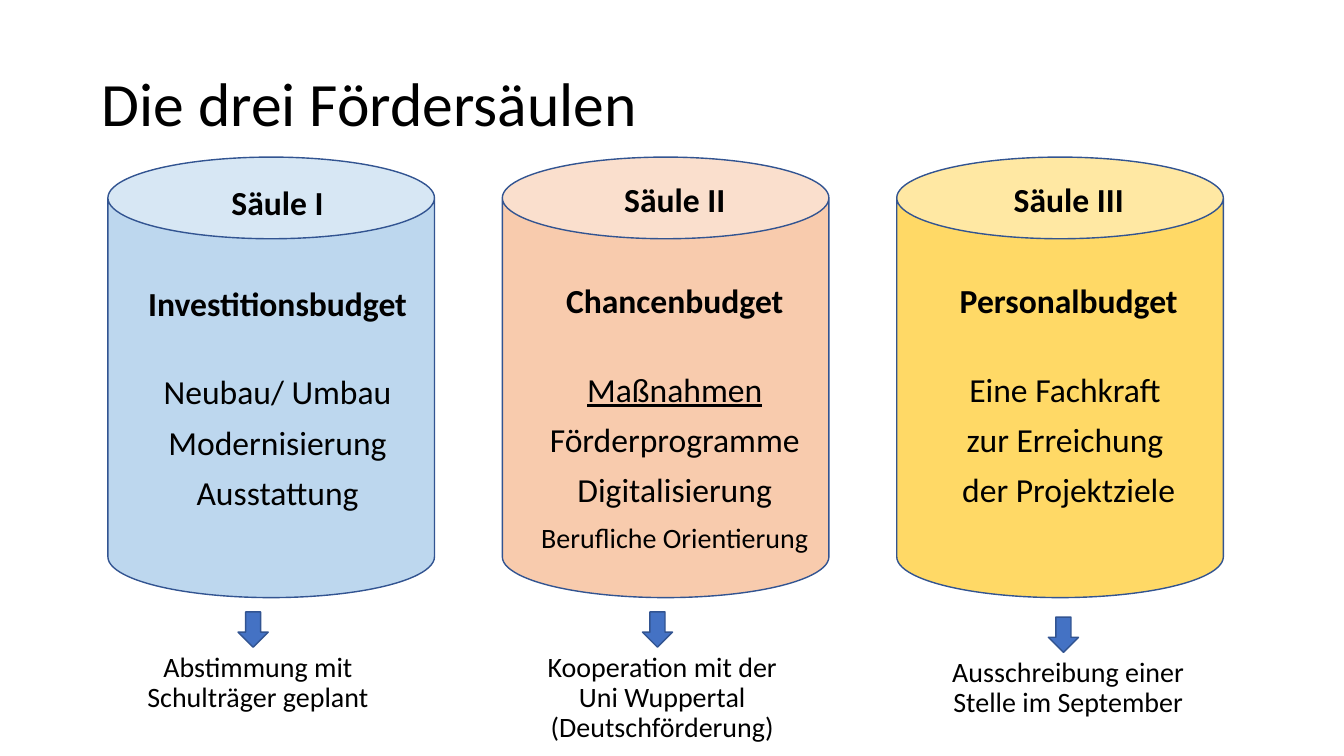
from lxml import etree
from pptx import Presentation
from pptx import util as u
from pptx.dml.color import RGBColor
from pptx.enum import shapes, text
from pptx.oxml.ns import qn

BLACK = RGBColor(0x00, 0x00, 0x00)
OUTLINE = RGBColor(0x32, 0x54, 0x91)
ARROW_BLUE = RGBColor(0x44, 0x72, 0xC4)
PILLAR_BLUE = RGBColor(0xBD, 0xD7, 0xEE)
PILLAR_ORANGE = RGBColor(0xF8, 0xCB, 0xAD)
PILLAR_YELLOW = RGBColor(0xFF, 0xD9, 0x66)

# One entry per pillar: fill, text position, lines, note position, note (cm)
PILLARS = [
    (PILLAR_BLUE, (2.08, 4.57),
     ["Säule I", "Investitionsbudget", "Neubau/ Umbau", "Modernisierung", "Ausstattung"],
     (2.92, 16.33), "Abstimmung mit Schulträger geplant"),
    (PILLAR_ORANGE, (12.09, 4.5),
     ["Säule II", "Chancenbudget", "Maßnahmen", "Förderprogramme", "Digitalisierung",
      "Berufliche Orientierung"],
     (13.11, 16.33), "Kooperation mit der Uni Wuppertal (Deutschförderung)"),
    (PILLAR_YELLOW, (22.02, 4.5),
     ["Säule III", "Personalbudget", "Eine Fachkraft ", "zur Erreichung ", "der Projektziele"],
     (23.34, 16.46), "Ausschreibung einer Stelle im September"),
]
GAP_BEFORE = {1: 46, 2: 37.5}  # wider space above the budget name and the list


def add_preset(kind, left, top, width, height, fill):
    shape = page.shapes.add_shape(kind, u.Cm(left), u.Cm(top), u.Cm(width), u.Cm(height))
    shape.shadow.inherit = False
    shape.fill.solid()
    shape.fill.fore_color.rgb = fill
    shape.line.color.rgb = OUTLINE
    shape.line.width = u.Pt(1)
    return shape


def write_lines(box, lines, size, align=text.PP_ALIGN.CENTER):
    frame = box.text_frame
    frame.word_wrap = True
    frame.auto_size = text.MSO_AUTO_SIZE.NONE
    frame.text = "\n".join(lines)
    for para in frame.paragraphs:
        para.alignment = align
        para.line_spacing = 0.9
        para.space_before = u.Pt(10)
        para.font.name = "Calibri"
        para.font.size = u.Pt(size)
        para.font.color.rgb = BLACK
    return frame.paragraphs


deck = Presentation()
deck.slide_width, deck.slide_height = u.Cm(33.87), u.Cm(19.05)
page = deck.slides.add_slide(deck.slide_layouts[1])

# Title
title = page.shapes.title
title.left, title.top, title.width, title.height = map(u.Cm, (2.31, 0.84, 29.21, 3.68))
title.text_frame.vertical_anchor = text.MSO_ANCHOR.MIDDLE
write_lines(title, ["Die drei Fördersäulen"], 44, text.PP_ALIGN.LEFT)[0].space_before = u.Pt(0)

body = page.placeholders[1]
for index, (fill, text_at, lines, note_at, note) in enumerate(PILLARS):
    # Pillar
    can = add_preset(shapes.MSO_SHAPE.CAN, 2.72 + 9.94 * index, 3.96, 8.23, 11.1, fill)

    # Pillar text, in the body placeholder for the first pillar
    box = body if index == 0 else page.shapes.add_textbox(0, 0, 0, 0)
    box.left, box.top, box.width, box.height = map(u.Cm, (*text_at, 9.83, 12.14))
    can.element.addnext(box.element)
    for row, para in enumerate(write_lines(box, lines, 24)):
        para.font.bold = row < 2
        para.space_before = u.Pt(GAP_BEFORE.get(row, 10))
        para.font.underline = para.text == "Maßnahmen"
        if row == 5:
            para.font.size = u.Pt(20)
        if box is body:
            properties = para._p.get_or_add_pPr()
            properties.set("marL", "0")
            properties.set("indent", "0")
            bullet = etree.Element(qn("a:buNone"))
            properties.find(qn("a:defRPr")).addprevious(bullet)

    # Note with its arrow
    left, top = note_at
    note_box = page.shapes.add_textbox(u.Cm(left), u.Cm(top), u.Cm(7.16), u.Cm(2.97))
    write_lines(note_box, [note], 20)
    add_preset(shapes.MSO_SHAPE.DOWN_ARROW, left + 3.08, top - 0.91, 0.76, 0.89, ARROW_BLUE)

deck.save("out.pptx")
